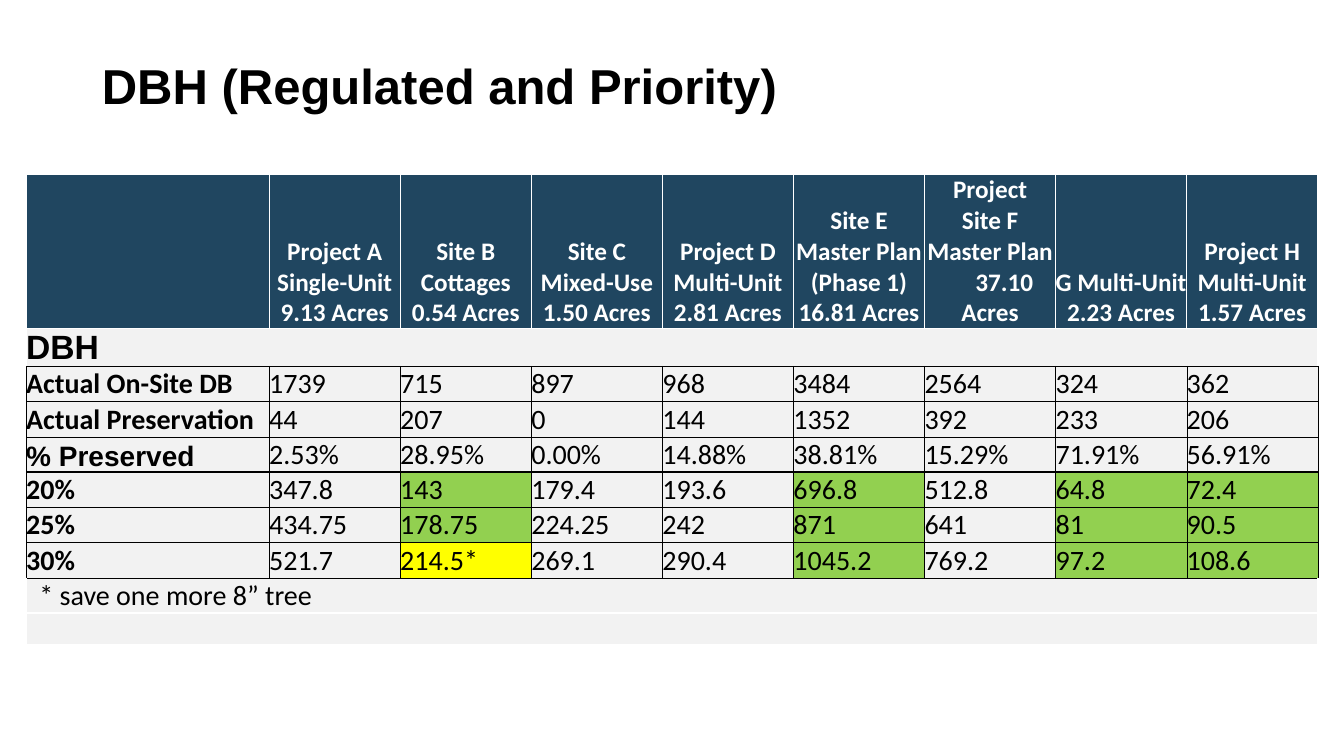
"""Build the slide that compares tree preservation by DBH across projects."""
import pptx
import pptx.dml.color
import pptx.enum.text
import pptx.oxml.ns
import pptx.util
from lxml import etree

Inches, Pt = pptx.util.Inches, pptx.util.Pt
RGBColor = pptx.dml.color.RGBColor
ALIGN, ANCHOR = pptx.enum.text.PP_ALIGN, pptx.enum.text.MSO_ANCHOR

NAVY = RGBColor(0x20, 0x46, 0x60)
GREY = RGBColor(0xF2, 0xF2, 0xF2)
GREEN = RGBColor(0x92, 0xD0, 0x50)
YELLOW = RGBColor(0xFF, 0xFF, 0x00)
BLACK = RGBColor(0x00, 0x00, 0x00)
WHITE = RGBColor(0xFF, 0xFF, 0xFF)

TITLE = "DBH (Regulated and Priority)"
PROJECTS = [
    "",
    "Project A Single-Unit 9.13 Acres",
    "Site B\nCottages 0.54 Acres",
    "Site C Mixed-Use 1.50 Acres",
    "Project D Multi-Unit 2.81 Acres",
    "Site E\nMaster Plan\n(Phase 1) 16.81 Acres",
    "Project\nSite F\nMaster Plan\n37.10 Acres",
    "G Multi-Unit\n2.23 Acres",
    "Project H Multi-Unit 1.57 Acres",
]
SECTION = "DBH"
PRESERVATION = ["Actual Preservation", "44", "207", "0", "144", "1352", "392", "233", "206"]
MEASURES = [
    ["Actual On-Site DB", "1739", "715", "897", "968", "3484", "2564", "324", "362"],
    PRESERVATION,
    ["% Preserved", "2.53%", "28.95%", "0.00%", "14.88%", "38.81%", "15.29%", "71.91%", "56.91%"],
]
TARGETS = [
    ["20%", "347.8", "143", "179.4", "193.6", "696.8", "512.8", "64.8", "72.4"],
    ["25%", "434.75", "178.75", "224.25", "242", "871", "641", "81", "90.5"],
    ["30%", "521.7", "214.5*", "269.1", "290.4", "1045.2", "769.2", "97.2", "108.6"],
]
FOOTNOTE = "* save one more 8” tree"

COLUMN_WIDTHS = [2.41] + [1.3] * 8
ROW_HEIGHTS = [1.53, 0.37] + [0.35] * 7 + [0.31]
WHITE_LINE, THIN_LINE, THICK_LINE = (WHITE, 1), (BLACK, 0.25), (BLACK, 2.25)


def draw_borders(cell, left, right, top, bottom):
    """Give each side of a cell its colour and width."""
    properties = cell._tc.get_or_add_tcPr()
    for side, (color, width) in zip("LRTB", (left, right, top, bottom)):
        line = etree.SubElement(properties, pptx.oxml.ns.qn(f"a:ln{side}"), w=str(Pt(width)))
        fill = etree.SubElement(line, pptx.oxml.ns.qn("a:solidFill"))
        etree.SubElement(fill, pptx.oxml.ns.qn("a:srgbClr"), val=str(color))


def format_cell(cell, text, size, fill, borders, bold=False, color=BLACK,
                name="Calibri", align=ALIGN.LEFT):
    """Fill a cell with text, colour and borders."""
    draw_borders(cell, *borders)
    cell.fill.solid()
    cell.fill.fore_color.rgb = fill
    cell.margin_left = cell.margin_right = cell.margin_top = cell.margin_bottom = 0
    cell.vertical_anchor = ANCHOR.BOTTOM
    cell.text = text
    for para in cell.text_frame.paragraphs:
        para.alignment = align
        para.font.size = Pt(size)
        para.font.name = name
        para.font.bold = bold
        para.font.color.rgb = color


def target_fill(target, preserved):
    """Choose the colour that shows whether a target is met."""
    if target.endswith("*"):
        return YELLOW
    return GREEN if float(target) <= float(preserved) else GREY


def add_title(page):
    """Place the slide title."""
    title = page.shapes.title
    title.left, title.top = Inches(0.91), Inches(0.54)
    title.width, title.height = Inches(11.5), Inches(0.65)
    title.text_frame.text = TITLE
    title.text_frame.vertical_anchor = ANCHOR.BOTTOM
    para = title.text_frame.paragraphs[0]
    para.alignment = ALIGN.LEFT
    para.line_spacing = 0.9
    para.font.size, para.font.name, para.font.bold = Pt(35), "Arial", True
    para.font.color.rgb = BLACK


def add_comparison(page):
    """Place the table of projects, measures and targets."""
    table = page.shapes.add_table(
        len(ROW_HEIGHTS), len(COLUMN_WIDTHS), Inches(0.26), Inches(1.73),
        Inches(sum(COLUMN_WIDTHS)), Inches(sum(ROW_HEIGHTS))).table
    for column, width in zip(table.columns, COLUMN_WIDTHS):
        column.width = Inches(width)
    for row, height in zip(table.rows, ROW_HEIGHTS):
        row.height = Inches(height)

    for index, project in enumerate(PROJECTS):
        format_cell(table.cell(0, index), project, 18, NAVY, [WHITE_LINE] * 4,
                    bold=True, color=WHITE, align=ALIGN.CENTER)
    indented_acres = table.cell(0, 6).text_frame.paragraphs[-1]
    indented_acres._p.get_or_add_pPr().set("indent", str(Inches(0.28)))

    first_target = 2 + len(MEASURES)
    for row, values in enumerate(MEASURES + TARGETS, start=2):
        top = THICK_LINE if row == first_target else THIN_LINE
        bottom = THICK_LINE if row == first_target - 1 else THIN_LINE
        for column, value in enumerate(values):
            is_label = column == 0
            fill = GREY
            if row >= first_target and not is_label:
                fill = target_fill(value, PRESERVATION[column])
            format_cell(table.cell(row, column), value, 20, fill,
                        (THIN_LINE, THIN_LINE, top, bottom), bold=is_label,
                        name="Arial" if value == "% Preserved" else "Calibri")

    footnote_row = first_target + len(TARGETS)
    bands = [
        (1, SECTION, 24, "Arial", True, WHITE_LINE, THIN_LINE),
        (footnote_row, FOOTNOTE, 20, "Calibri", False, THIN_LINE, WHITE_LINE),
        (footnote_row + 1, "", 18, "Calibri", False, WHITE_LINE, WHITE_LINE),
    ]
    for row, text, size, name, bold, top, bottom in bands:
        for column in range(len(COLUMN_WIDTHS)):
            format_cell(table.cell(row, column), text if column == 0 else "", size, GREY,
                        (WHITE_LINE, WHITE_LINE, top, bottom), bold=bold, name=name)
        table.cell(row, 0).merge(table.cell(row, len(COLUMN_WIDTHS) - 1))
    table.cell(footnote_row, 0).margin_left = Inches(0.13)


def main():
    """Build and save the deck."""
    deck = pptx.Presentation()
    deck.slide_width, deck.slide_height = Inches(13.33), Inches(7.5)
    page = deck.slides.add_slide(deck.slide_layouts[5])
    add_title(page)
    add_comparison(page)
    deck.save("out.pptx")


if __name__ == "__main__":
    main()
